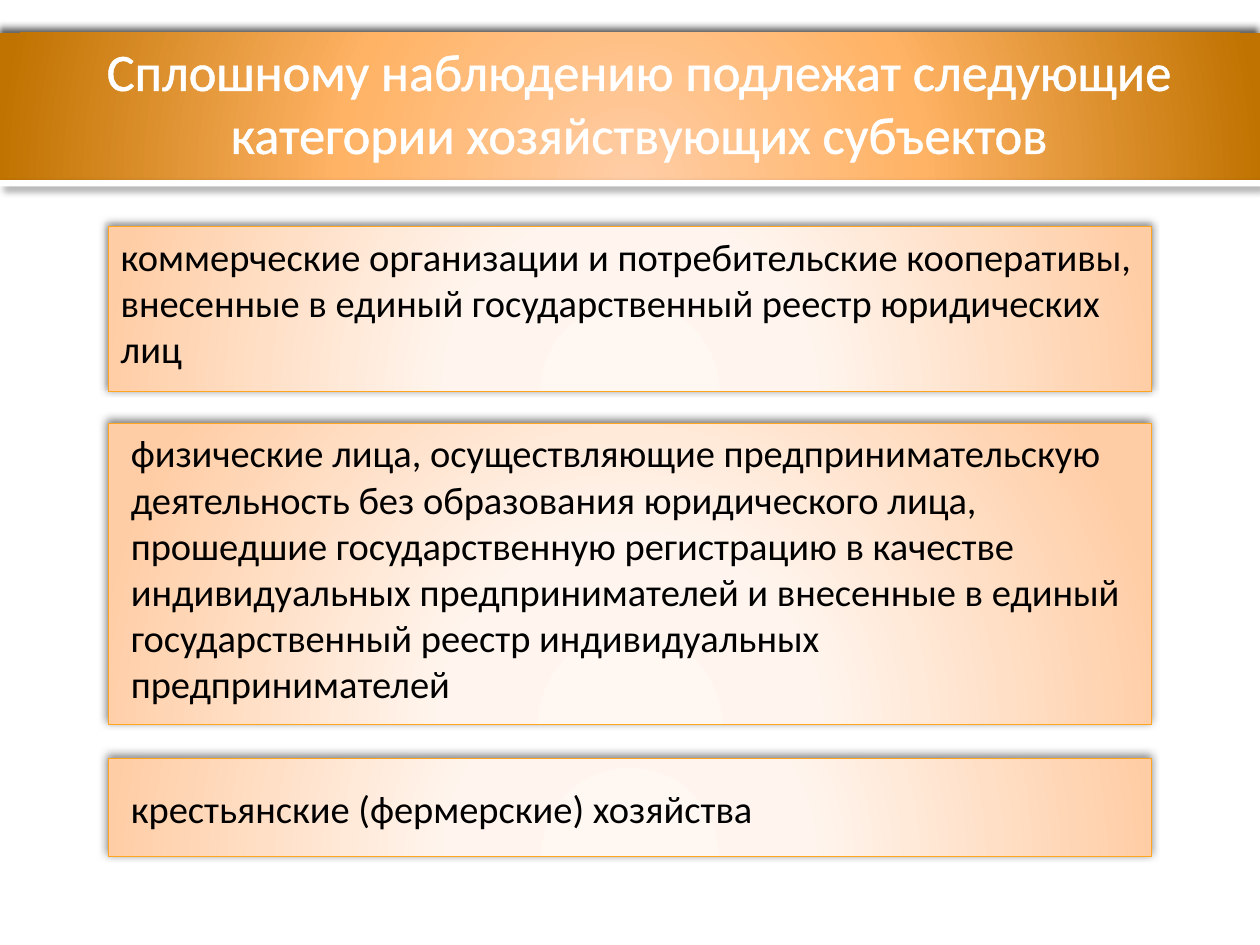
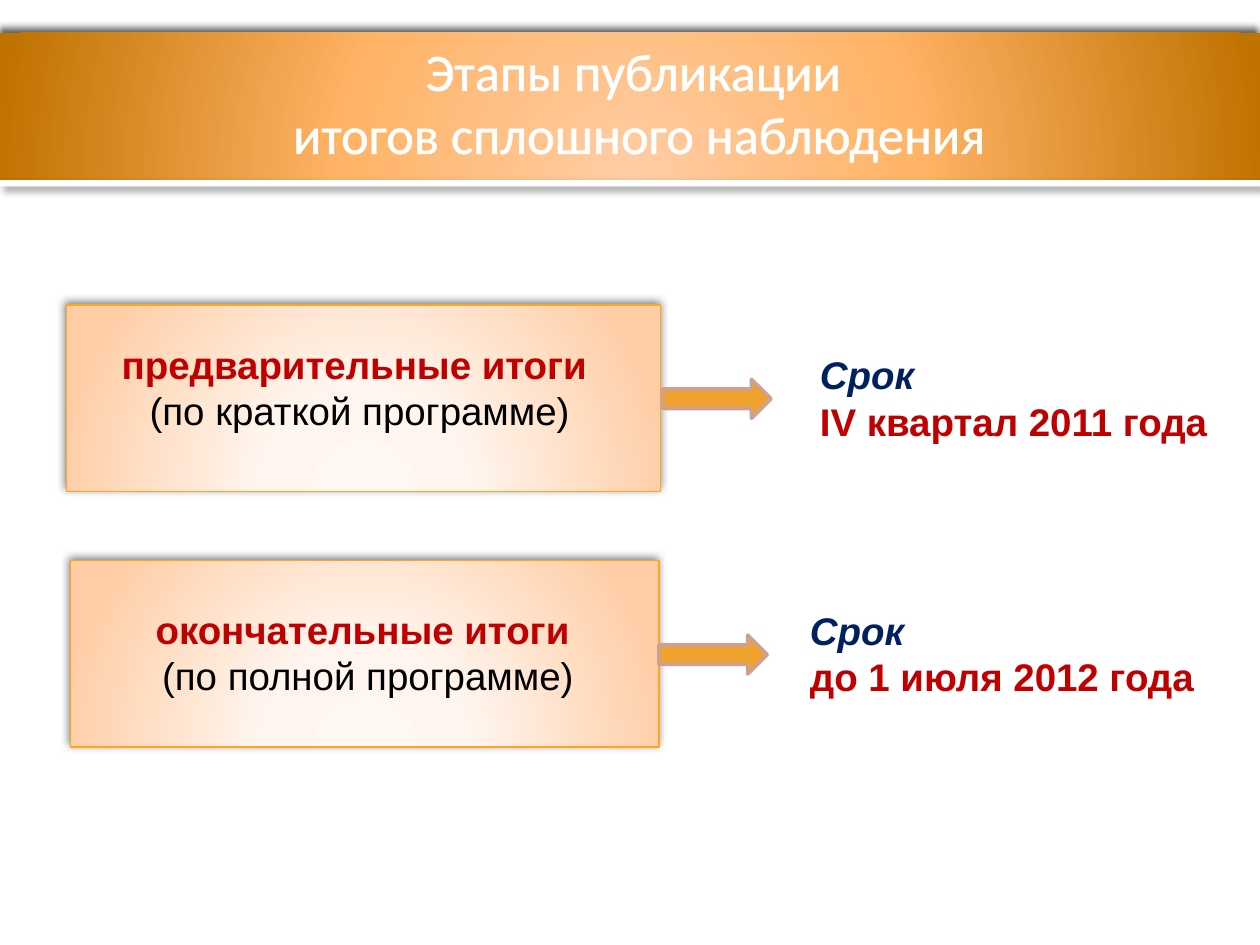
from lxml import etree
from pptx import Presentation
from pptx.dml.color import RGBColor
from pptx.enum.shapes import MSO_SHAPE
from pptx.enum.text import MSO_ANCHOR, PP_ALIGN
from pptx.util import Inches, Pt

RECT, ARROW = MSO_SHAPE.RECTANGLE, MSO_SHAPE.RIGHT_ARROW
LEFT, CENTER = PP_ALIGN.LEFT, PP_ALIGN.CENTER
TOP, MIDDLE = MSO_ANCHOR.TOP, MSO_ANCHOR.MIDDLE

WHITE = RGBColor(0xFF, 0xFF, 0xFF)
BLACK = RGBColor(0x00, 0x00, 0x00)
RED = RGBColor(0xC0, 0x00, 0x00)
NAVY = RGBColor(0x00, 0x20, 0x60)
AMBER = RGBColor(0xF0, 0xA2, 0x2E)
EDGE = RGBColor(0xFF, 0xA5, 0x1F)
ROSE = RGBColor(0xCC, 0xA1, 0x92)

# Gradients as (percent, colour); shadows as (alpha, blur, distance, angle)
CREAM = [(0, "FFF7F2"), (34, "FFF5EE"), (100, "FFCDA5")]
BRONZE = [(0, "FFCDA5"), (46, "FFB365"), (100, "C07300")]
BOX_SHADE = (50, 5, 2, 245)
BAND_SHADE = (60, 4, 3, 245)
STRIP_SHADE = (40, 4, 3, 45)
NS = 'xmlns:a="http://schemas.openxmlformats.org/drawingml/2006/main"'


def add_block(slide, kind, at, fill, line=None, width=0.75, shade=None):
    """Add a shape whose fill is one colour or a list of gradient stops."""
    block = slide.shapes.add_shape(kind, *map(Inches, at))
    block.shadow.inherit = False
    if isinstance(fill, list):
        block.fill.background()
        stops = "".join(
            f'<a:gs pos="{pos * 1000}"><a:srgbClr val="{tone}"/></a:gs>'
            for pos, tone in fill)
        grad = etree.fromstring(
            f'<a:gradFill {NS} rotWithShape="1"><a:gsLst>{stops}</a:gsLst>'
            '<a:path path="circle"><a:fillToRect l="50000" t="155000" '
            'r="50000" b="-55000"/></a:path></a:gradFill>')
        props = block.element.spPr
        props.replace(props.find("{*}noFill"), grad)
    else:
        block.fill.solid()
        block.fill.fore_color.rgb = fill
    if line:
        block.line.color.rgb = line
        block.line.width = Pt(width)
    else:
        block.line.fill.background()
    if shade:
        alpha, blur, dist, angle = shade
        block.element.spPr.find("{*}effectLst").append(etree.fromstring(
            f'<a:outerShdw {NS} blurRad="{Pt(blur)}" dist="{Pt(dist)}" '
            f'dir="{angle * 60000}" algn="tl" rotWithShape="0">'
            f'<a:srgbClr val="000000"><a:alpha val="{alpha * 1000}"/>'
            '</a:srgbClr></a:outerShdw>'))


def add_text(slide, at, lines, size=22, font="Calibri", align=LEFT,
             anchor=TOP, outline=False):
    """Add a text box; each line is (text, colour, bold, italic)."""
    frame = slide.shapes.add_textbox(*map(Inches, at)).text_frame
    frame.word_wrap = True
    frame.vertical_anchor = anchor
    for i, (text, color, bold, italic) in enumerate(lines):
        para = frame.add_paragraph() if i else frame.paragraphs[0]
        para.alignment = align
        run = para.add_run()
        run.text = text
        run.font.size, run.font.name = Pt(size), font
        run.font.bold, run.font.italic = bold, italic
        run.font.color.rgb = color
        if outline:
            props = run.font.fill._xPr
            props.insert(0, etree.fromstring(
                f'<a:ln {NS} w="{Pt(1.45)}"><a:solidFill>'
                '<a:srgbClr val="FFFFFF"/></a:solidFill></a:ln>'))
            props.find("{*}solidFill").addnext(etree.fromstring(
                f'<a:effectLst {NS}><a:outerShdw blurRad="{Pt(2)}" '
                f'dist="{Pt(2)}" dir="2700000"><a:srgbClr val="000000">'
                '<a:alpha val="40000"/></a:srgbClr></a:outerShdw>'
                '</a:effectLst>'))


deck = Presentation()
deck.slide_width, deck.slide_height = Inches(10), Inches(7.5)

# Title bands on both slides
titles = [
    ["Сплошному наблюдению подлежат следующие категории "
     "хозяйствующих субъектов"],
    ["Этапы публикации ", "итогов сплошного наблюдения"],
]
slides = []
for title in titles:
    slide = deck.slides.add_slide(deck.slide_layouts[6])
    add_block(slide, RECT, (0, 0.26, 10, 1.17), BRONZE, shade=BAND_SHADE)
    add_text(slide, (0.7, 0.26, 8.75, 1.09),
             [(text, WHITE, False, False) for text in title],
             size=30, align=CENTER, anchor=MIDDLE, outline=True)
    add_block(slide, RECT, (0, 1.43, 10, 0.05), WHITE, shade=STRIP_SHADE)
    slides.append(slide)
groups, stages = slides

# Slide 1: who is surveyed (box top, box height, text place, text)
kinds = [
    (1.8, 1.31, (0.86, 1.8, 8.44, 1.56),
     "коммерческие организации и потребительские кооперативы, внесенные "
     "в единый государственный реестр юридических лиц"),
    (3.36, 2.39, (0.94, 3.36, 8.13, 2.73),
     "физические лица, осуществляющие предпринимательскую деятельность "
     "без образования юридического лица, прошедшие государственную "
     "регистрацию в качестве индивидуальных предпринимателей и внесенные "
     "в единый государственный реестр индивидуальных предпринимателей"),
    (6.02, 0.78, (0.94, 6.18, 8.44, 0.47),
     "крестьянские (фермерские) хозяйства"),
]
for top, height, place, text in kinds:
    add_block(groups, RECT, (0.86, top, 8.28, height), CREAM, EDGE,
              shade=BOX_SHADE)
    add_text(groups, place, [(text, BLACK, False, False)])

# Slide 2: result box, arrow and due date in each row
rows = [
    ((0.53, 2.42, 4.71, 1.48), (0.47, 2.66, 4.77, 0.84),
     "предварительные итоги ", "(по краткой программе)",
     (5.26, 3.01, 0.86, 0.31), (6.41, 2.74, 3.44, 0.84),
     "IV квартал 2011 года"),
    ((0.56, 4.45, 4.67, 1.48), (0.53, 4.76, 4.78, 0.84),
     "окончательные итоги ", "(по полной программе)",
     (5.23, 5.04, 0.86, 0.31), (6.33, 4.77, 3.52, 0.84),
     "до 1 июля 2012 года"),
]
for box, place, name, scope, arrow, due, date in rows:
    add_block(stages, RECT, box, CREAM, EDGE, shade=BOX_SHADE)
    add_text(stages, place,
             [(name, RED, True, False), (scope, BLACK, False, False)],
             font="Arial", align=CENTER)
    add_block(stages, ARROW, arrow, AMBER, ROSE, width=2)
    add_text(stages, due,
             [("Срок", NAVY, True, True), (date, RED, True, False)],
             font="Arial")

deck.save("out.pptx")
